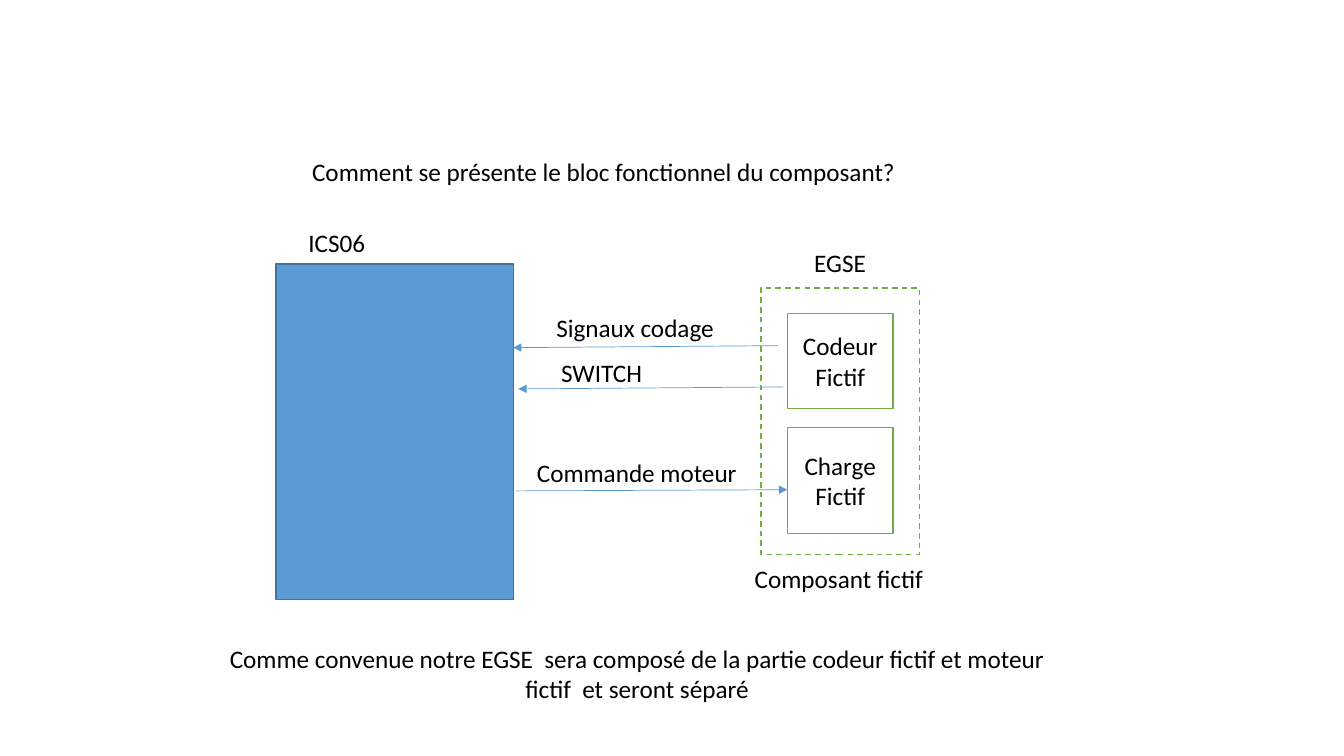
from lxml.etree import SubElement
from pptx import Presentation
from pptx.dml.color import RGBColor
from pptx.enum.dml import MSO_LINE
from pptx.enum.shapes import MSO_CONNECTOR, MSO_SHAPE
from pptx.enum.text import MSO_ANCHOR, MSO_AUTO_SIZE, PP_ALIGN
from pptx.oxml.ns import qn
from pptx.util import Cm, Pt

BLACK = RGBColor(0x00, 0x00, 0x00)
BLUE = RGBColor(0x5B, 0x9B, 0xD5)
DARK_BLUE = RGBColor(0x43, 0x73, 0x9E)
GREEN = RGBColor(0x70, 0xAD, 0x47)


class BlockDiagram:
    """Holds the text style and the slide being drawn."""

    font_format = {"name": "Calibri", "size": Pt(18)}
    label_height = 1.02

    def __init__(self, slide):
        self.slide = slide

    def add_text(self, shape, text, align, **frame_format):
        frame = shape.text_frame
        for name, value in frame_format.items():
            setattr(frame, name, value)
        paragraph = frame.paragraphs[0]
        paragraph.alignment = align
        run = paragraph.add_run()
        run.text = text
        for name, value in self.font_format.items():
            setattr(run.font, name, value)
        run.font.color.rgb = BLACK

    def label(self, text, left, top, width, height=label_height,
              align=PP_ALIGN.LEFT, wrap=False):
        shape = self.slide.shapes.add_textbox(
            Cm(left), Cm(top), Cm(width), Cm(height))
        self.add_text(shape, text, align, word_wrap=wrap,
                      auto_size=MSO_AUTO_SIZE.SHAPE_TO_FIT_TEXT)

    def block(self, left, top, width, height, outline, fill=None, dash=None,
              text=None):
        shape = self.slide.shapes.add_shape(
            MSO_SHAPE.RECTANGLE, Cm(left), Cm(top), Cm(width), Cm(height))
        shape.shadow.inherit = False
        if fill is None:
            shape.fill.background()
        else:
            shape.fill.solid()
            shape.fill.fore_color.rgb = fill
        shape.line.color.rgb = outline
        shape.line.width = Pt(1)
        if dash is not None:
            shape.line.dash_style = dash
        if text:
            self.add_text(shape, text, PP_ALIGN.CENTER, word_wrap=True,
                          vertical_anchor=MSO_ANCHOR.MIDDLE)

    def arrow(self, start_x, start_y, end_x, end_y):
        connector = self.slide.shapes.add_connector(
            MSO_CONNECTOR.STRAIGHT,
            Cm(start_x), Cm(start_y), Cm(end_x), Cm(end_y))
        connector.line.color.rgb = BLUE
        connector.line.width = Pt(0.5)
        # Arrowhead at the end, and no shadow
        properties = connector._element.spPr
        SubElement(properties.find(qn("a:ln")), qn("a:tailEnd"),
                   type="triangle")
        SubElement(properties, qn("a:effectLst"))


def main():
    presentation = Presentation()
    presentation.slide_width = Cm(33.87)
    presentation.slide_height = Cm(19.05)
    slide = presentation.slides.add_slide(presentation.slide_layouts[6])
    diagram = BlockDiagram(slide)

    # Question and conclusion
    diagram.label("Comment se présente le bloc fonctionnel du composant?",
                  7.52, 3.81, 15.39, align=PP_ALIGN.CENTER)
    diagram.label("Comme convenue notre EGSE  sera composé de la partie codeur "
                  "fictif et moteur fictif  et seront séparé",
                  5.11, 16.08, 21.89, 1.8, PP_ALIGN.CENTER, wrap=True)

    # Main component
    diagram.label("ICS06", 7.52, 5.61, 1.96)
    diagram.block(6.96, 6.65, 5.99, 8.46, DARK_BLUE, fill=BLUE)

    # Signals between the component and the test equipment
    diagram.arrow(19.61, 8.71, 12.93, 8.76)
    diagram.arrow(19.74, 9.75, 13.06, 9.8)
    diagram.arrow(13, 12.37, 19.84, 12.34)
    diagram.label("Signaux codage", 13.77, 7.75, 4.52)
    diagram.label("SWITCH", 13.89, 8.89, 2.57)
    diagram.label("Commande moteur", 13.28, 11.4, 5.61)

    # Test equipment with its two fictitious parts
    diagram.label("EGSE", 20.27, 6.12, 1.83)
    diagram.block(19.18, 7.26, 3.99, 6.71, GREEN, dash=MSO_LINE.DASH)
    for text, top, height in (("Codeur Fictif", 7.9, 2.39),
                              ("Charge Fictif", 10.77, 2.67)):
        diagram.block(19.84, top, 2.67, height, GREEN, text=text)
    diagram.label("Composant fictif", 18.77, 14.07, 4.8)

    presentation.save("out.pptx")


if __name__ == "__main__":
    main()
